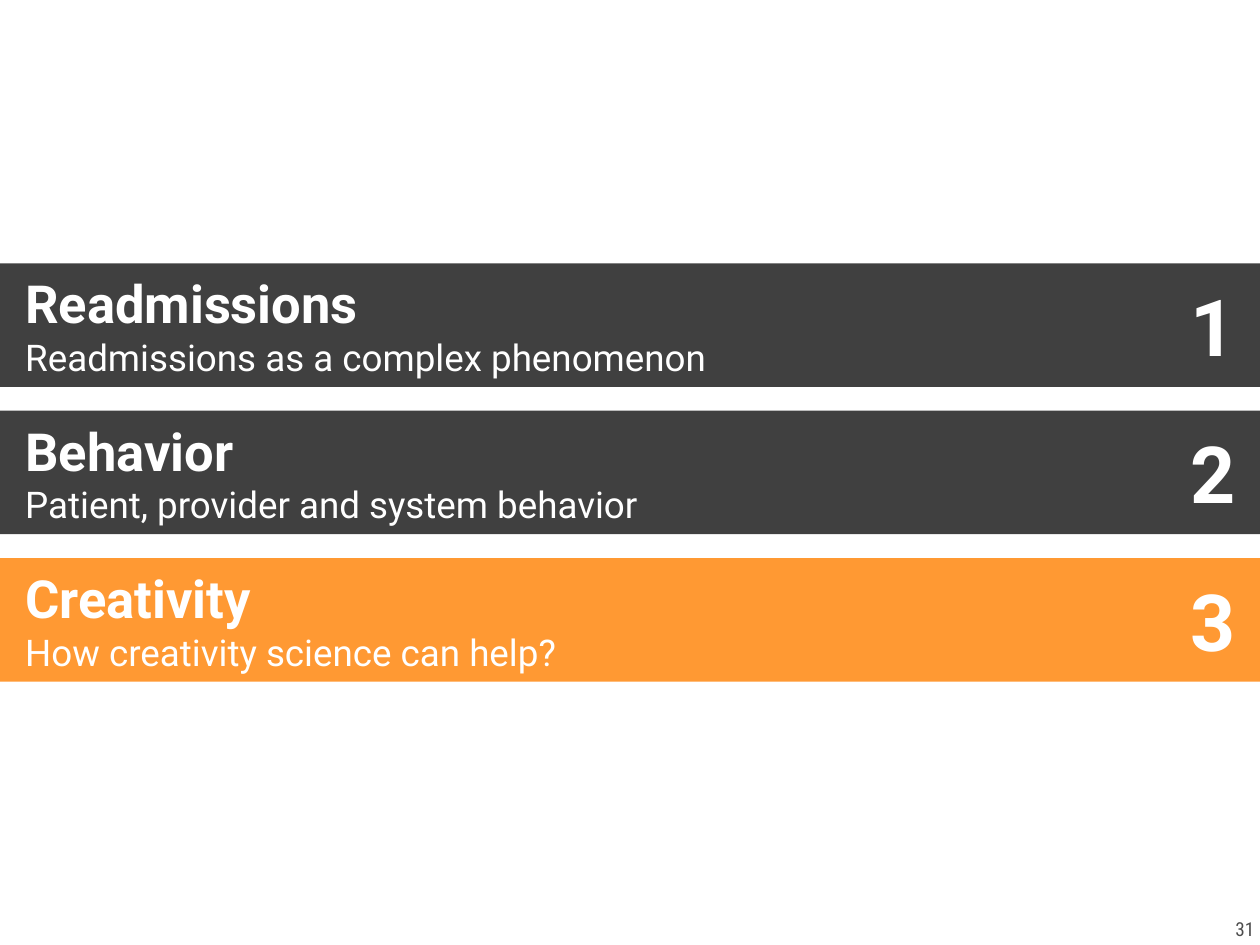
from dataclasses import dataclass

from pptx import Presentation
from pptx.dml.color import RGBColor
from pptx.enum.shapes import MSO_SHAPE
from pptx.enum.text import MSO_ANCHOR, PP_ALIGN
from pptx.slide import Slide
from pptx.util import Inches, Pt

RECTANGLE = MSO_SHAPE.RECTANGLE
TOP, MIDDLE = MSO_ANCHOR.TOP, MSO_ANCHOR.MIDDLE
LEFT, CENTER, RIGHT = PP_ALIGN.LEFT, PP_ALIGN.CENTER, PP_ALIGN.RIGHT

COLORS = {"dark": "404040", "accent": "FF9933", "text": "FFFFFF", "page": "4D4D4D"}

# Grid in inches: one full-width band per row
SLIDE_WIDTH, SLIDE_HEIGHT = 10, 7.5
FIRST_TOP, ROW_PITCH, BAND_HEIGHT = 2.09, 1.17, 0.98
MARGIN = 0.2
TITLE_WIDTH, TITLE_HEIGHT = 9.22, 0.9
NUMBER_WIDTH, NUMBER_HEIGHT = 0.35, 0.76


@dataclass
class Section:
    title: str
    subtitle: str
    fill: str


@dataclass
class Line:
    text: str
    size: float
    bold: bool = False
    color: str = "text"
    font: str = "Roboto"


SECTIONS = [
    Section("Readmissions", "Readmissions as a complex phenomenon", "dark"),
    Section("Behavior", "Patient, provider and system behavior", "dark"),
    Section("Creativity", "How creativity science can help?", "accent"),
]


def rgb(name: str) -> RGBColor:
    return RGBColor.from_string(COLORS[name])


def add_text(slide: Slide, box: tuple[float, float, float, float], lines: list[Line],
             alignment: PP_ALIGN = LEFT, anchor: MSO_ANCHOR = MIDDLE,
             wrap: bool = True, vertical_inset: float = 0) -> None:
    frame = slide.shapes.add_textbox(*map(Inches, box)).text_frame
    frame.word_wrap = wrap
    frame.vertical_anchor = anchor
    frame.margin_left = frame.margin_right = 0
    frame.margin_top = frame.margin_bottom = Inches(vertical_inset)
    for index, line in enumerate(lines):
        paragraph = frame.add_paragraph() if index else frame.paragraphs[0]
        paragraph.text = line.text
        paragraph.alignment = alignment
        paragraph.font.name = line.font
        paragraph.font.size = Pt(line.size)
        paragraph.font.bold = line.bold
        paragraph.font.color.rgb = rgb(line.color)


def add_section(slide: Slide, row: int, section: Section) -> None:
    top = FIRST_TOP + row * ROW_PITCH
    middle = top + BAND_HEIGHT / 2

    # Band
    band = slide.shapes.add_shape(RECTANGLE, 0, Inches(top), Inches(SLIDE_WIDTH), Inches(BAND_HEIGHT))
    band.shadow.inherit = False
    band.fill.solid()
    band.fill.fore_color.rgb = rgb(section.fill)
    band.line.fill.background()

    # Title with subtitle, and the number at the right margin
    add_text(slide, (MARGIN, middle - TITLE_HEIGHT / 2, TITLE_WIDTH, TITLE_HEIGHT),
             [Line(section.title, 30, bold=True), Line(section.subtitle, 21)])
    add_text(slide, (SLIDE_WIDTH - MARGIN - NUMBER_WIDTH, middle - NUMBER_HEIGHT / 2,
                     NUMBER_WIDTH, NUMBER_HEIGHT),
             [Line(str(row + 1), 45, bold=True)], alignment=RIGHT, wrap=False)


def main() -> None:
    presentation = Presentation()
    presentation.slide_width = Inches(SLIDE_WIDTH)
    presentation.slide_height = Inches(SLIDE_HEIGHT)
    slide = presentation.slides.add_slide(presentation.slide_layouts[6])

    # Page number, without side insets so both digits fit on one line
    add_text(slide, (9.76, 7.24, 0.24, 0.26),
             [Line("31", 11, color="page", font="Roboto Condensed")],
             alignment=CENTER, anchor=TOP, wrap=False, vertical_inset=0.04)

    # Agenda sections
    for row, section in enumerate(SECTIONS):
        add_section(slide, row, section)

    presentation.save("out.pptx")


if __name__ == "__main__":
    main()
